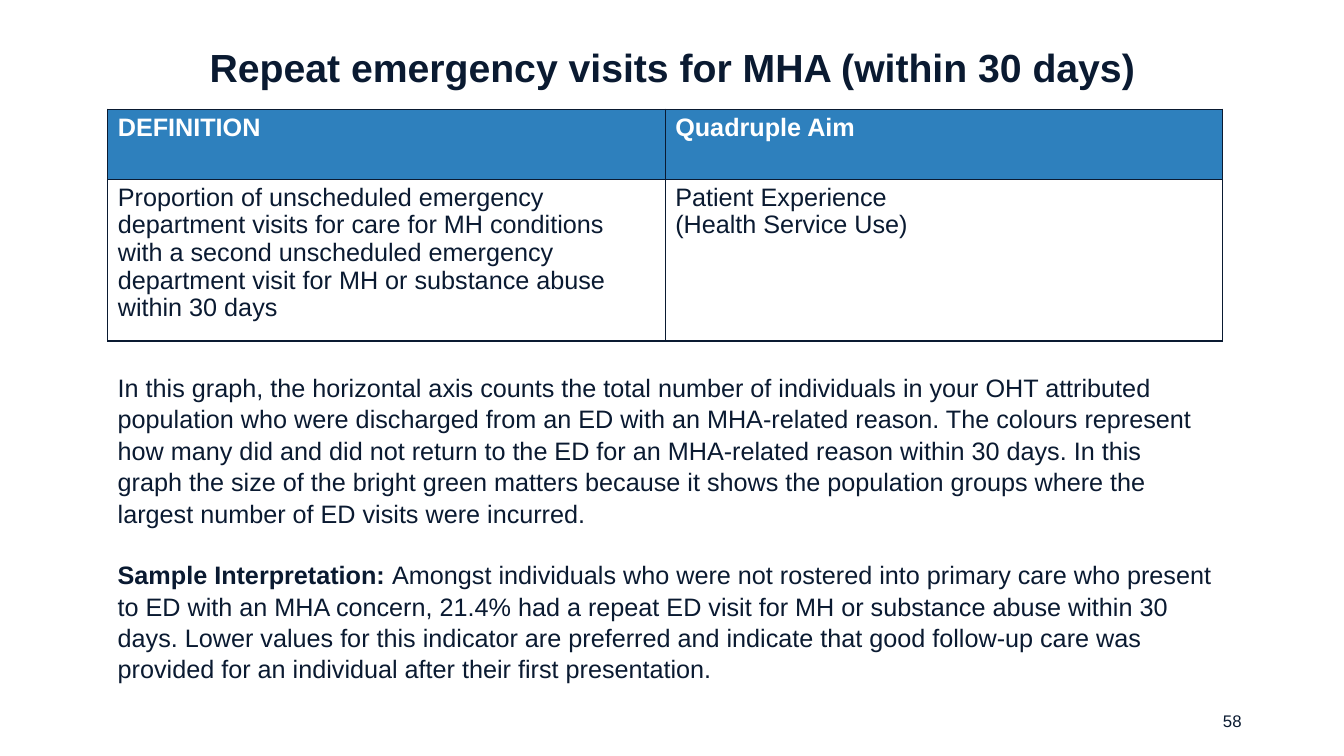
from dataclasses import dataclass

from lxml import etree
from pptx import Presentation, util as u
from pptx.dml.color import RGBColor
from pptx.enum import text
from pptx.oxml import ns

Pt = u.Pt


@dataclass(frozen=True)
class Theme:
    """Colours, font and type sizes of the deck."""
    ink: RGBColor = RGBColor(0x0A, 0x1A, 0x31)
    blue: RGBColor = RGBColor(0x2E, 0x80, 0xBD)
    white: RGBColor = RGBColor(0xFF, 0xFF, 0xFF)
    font: str = "Arial"
    title: int = 28
    body: int = 18
    number: int = 12


THEME = Theme()

DEFINITION = [
    ["DEFINITION", "Quadruple Aim"],
    ["Proportion of unscheduled emergency department visits for care for MH conditions "
     "with a second unscheduled emergency department visit for MH or substance abuse "
     "within 30 days",
     "Patient Experience\n(Health Service Use)"],
]
EXPLANATION = [
    [("In this graph, the horizontal axis counts the total number of individuals in your "
      "OHT attributed population who were discharged from an ED with an MHA-related reason. "
      "The colours represent how many did and did not return to the ED for an MHA-related "
      "reason within 30 days. In this graph the size of the bright green matters because it "
      "shows the population groups where the largest number of ED visits were incurred.", False)],
    [("Sample Interpretation: ", True),
     ("Amongst individuals who were not rostered into primary care who present to ED with an "
      "MHA concern, 21.4% had a repeat ED visit for MH or substance abuse within 30 days. "
      "Lower values for this indicator are preferred and indicate that good follow-up care "
      "was provided for an individual after their first presentation.", False)],
]


def style(para, size, color, bold=None):
    """Set the font of a whole paragraph."""
    para.font.name = THEME.font
    para.font.size = Pt(size)
    para.font.color.rgb = color
    para.font.bold = bold


def add_text(page, box, anchor):
    """Add a wrapping text box and return its text frame."""
    frame = page.shapes.add_textbox(*map(Pt, box)).text_frame
    frame.word_wrap = True
    frame.vertical_anchor = anchor
    return frame


def add_line(page, box, words, size, align, bold=None):
    """Add one vertically centred line of text."""
    para = add_text(page, box, text.MSO_ANCHOR.MIDDLE).paragraphs[0]
    para.text = words
    para.alignment = align
    style(para, size, THEME.ink, bold)


def add_borders(cell):
    """Draw a thin line on all four sides of a cell."""
    props = cell._tc.get_or_add_tcPr()
    for place, side in enumerate(("lnL", "lnR", "lnT", "lnB")):
        line = etree.Element(ns.qn(f"a:{side}"), w=str(Pt(1)))
        fill = etree.SubElement(line, ns.qn("a:solidFill"))
        etree.SubElement(fill, ns.qn("a:srgbClr"), val=str(THEME.ink))
        props.insert(place, line)


def add_definition(page, box, header_height):
    """Add the definition table with a coloured header row."""
    left, top, width, height = box
    table = page.shapes.add_table(2, 2, *map(Pt, box)).table
    for column in table.columns:
        column.width = Pt(width / 2)
    table.rows[0].height = Pt(header_height)
    table.rows[1].height = Pt(height - header_height)
    for row, entries in enumerate(DEFINITION):
        header = row == 0
        for column, words in enumerate(entries):
            cell = table.cell(row, column)
            cell.text = words
            cell.fill.solid()
            cell.fill.fore_color.rgb = THEME.blue if header else THEME.white
            add_borders(cell)
            for para in cell.text_frame.paragraphs:
                para.line_spacing = 0.98
                style(para, THEME.body, THEME.white if header else THEME.ink, header)


def add_explanation(page, box):
    """Add the reading guide and the sample interpretation."""
    frame = add_text(page, box, text.MSO_ANCHOR.TOP)
    for index, spans in enumerate(EXPLANATION):
        para = frame.add_paragraph() if index else frame.paragraphs[0]
        para.line_spacing = 1.04
        if index:
            para.space_before = Pt(21.6)
        style(para, THEME.body, THEME.ink)
        for words, bold in spans:
            span = para.add_run()
            span.text = words
            span.font.bold = bold


def add_indicator_page(deck, box):
    """Build the indicator page inside the given box."""
    left, top, width, height = box
    page = deck.slides.add_slide(deck.slide_layouts[6])
    add_line(page, (left + 678, top + 500.4, 216, 28.8), "58", THEME.number,
             text.PP_ALIGN.RIGHT)
    add_line(page, (left + 55.4, top + 17.3, 849.6, 60.5),
             "Repeat emergency visits for MHA (within 30 days)", THEME.title,
             text.PP_ALIGN.CENTER, True)
    add_definition(page, (left + 77, top + 78, 796.4, 165.6), 50)
    add_explanation(page, (left + 77, top + 261.4, 796.4, 225.4))


def main():
    """Create and save the deck."""
    deck = Presentation()
    deck.slide_width, deck.slide_height = Pt(960), Pt(540)
    add_indicator_page(deck, (0, 0, 960, 540))
    deck.save("out.pptx")


if __name__ == "__main__":
    main()
